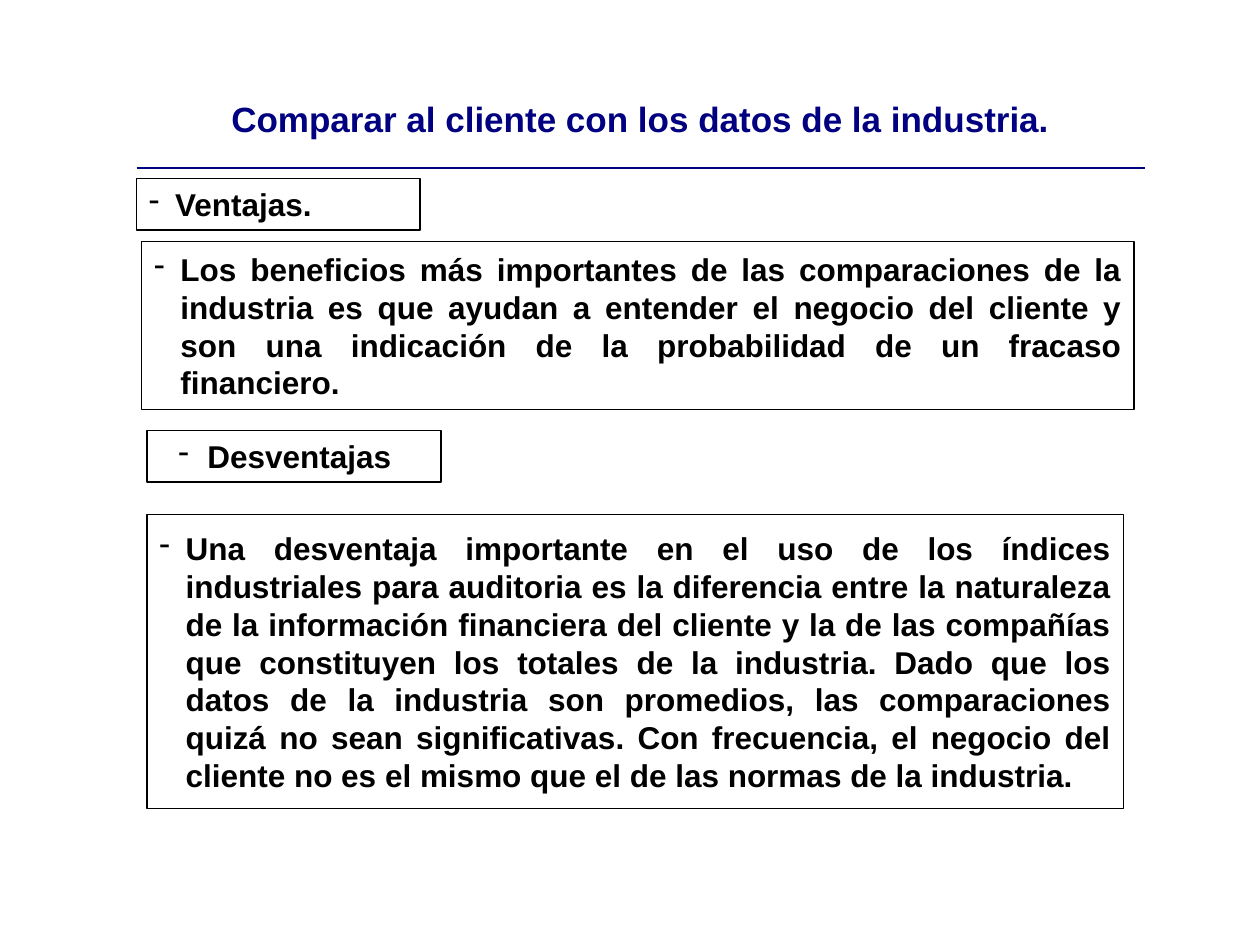
from dataclasses import dataclass

from lxml.etree import SubElement
from pptx import Presentation
from pptx.dml.color import RGBColor
from pptx.enum.shapes import MSO_SHAPE as Shape
from pptx.enum.text import MSO_ANCHOR as Anchor, PP_ALIGN as Align
from pptx.oxml.ns import qn
from pptx.util import Pt


@dataclass(frozen=True)
class Theme:
    font: str = "Arial"
    title_size: float = 20
    body_size: float = 18
    ink: RGBColor = RGBColor(0x00, 0x00, 0x00)
    navy: RGBColor = RGBColor(0x00, 0x00, 0x80)
    outline: float = 0.75
    rule: float = 1


THEME = Theme()
HANGING = (15, -15)
CENTERED = (6, -16.5)

TITLE = "Comparar al cliente con los datos de la industria."
ADVANTAGE = (
    "Los beneficios más importantes de las comparaciones de la industria es que "
    "ayudan a entender el negocio del cliente y son una indicación de la "
    "probabilidad de un fracaso financiero."
)
DISADVANTAGE = (
    "Una desventaja importante en el uso de los índices industriales para auditoria "
    "es la diferencia entre la naturaleza de la información financiera del cliente y "
    "la de las compañías que constituyen los totales de la industria. Dado que los "
    "datos de la industria son promedios, las comparaciones quizá no sean "
    "significativas. Con frecuencia, el negocio del cliente no es el mismo que el de "
    "las normas de la industria."
)

# Box (left, top, width, height), text, alignment, (margin, indent)
BOXES = [
    ((78, 102, 162, 29.5), "Ventajas.", Align.LEFT, HANGING),
    ((81, 138, 567, 96), ADVANTAGE, Align.JUSTIFY, HANGING),
    ((84, 294, 558, 168), DISADVANTAGE, Align.JUSTIFY, HANGING),
    ((84, 246, 168, 29.5), "Desventajas", Align.CENTER, CENTERED),
]


def write_text(text_frame, text, size, color, alignment):
    text_frame.text = text
    paragraph = text_frame.paragraphs[0]
    paragraph.alignment = alignment
    font = paragraph.runs[0].font
    font.name, font.size, font.bold = THEME.font, Pt(size), True
    font.color.rgb = color
    return paragraph


def add_dash_bullet(paragraph, margin, indent):
    properties = paragraph._p.get_or_add_pPr()
    properties.set("marL", str(Pt(margin)))
    properties.set("indent", str(Pt(indent)))
    SubElement(properties, qn("a:buFontTx"))
    SubElement(properties, qn("a:buChar"), char="-")


def add_title_table(slide, box):
    """Place the title in a one-cell table ruled along its bottom edge."""
    table = slide.shapes.add_table(1, 1, *map(Pt, box)).table
    table.first_row = table.horz_banding = False
    cell = table.cell(0, 0)
    write_text(cell.text_frame, TITLE, THEME.title_size, THEME.navy, Align.CENTER)
    properties = cell._tc.get_or_add_tcPr()
    for side in ("lnL", "lnR", "lnT"):
        SubElement(SubElement(properties, qn(f"a:{side}")), qn("a:noFill"))
    rule = SubElement(properties, qn("a:lnB"), w=str(Pt(THEME.rule)))
    fill = SubElement(rule, qn("a:solidFill"))
    SubElement(fill, qn("a:srgbClr"), val=str(THEME.navy))
    cell.fill.background()


def add_bullet_box(slide, box, text, alignment, indents):
    shape = slide.shapes.add_shape(Shape.RECTANGLE, *map(Pt, box))
    shape.shadow.inherit = False
    shape.fill.background()
    shape.line.color.rgb = THEME.ink
    shape.line.width = Pt(THEME.outline)
    text_frame = shape.text_frame
    text_frame.word_wrap = True
    text_frame.vertical_anchor = Anchor.MIDDLE
    paragraph = write_text(text_frame, text, THEME.body_size, THEME.ink, alignment)
    add_dash_bullet(paragraph, *indents)


def main():
    presentation = Presentation()
    presentation.slide_width, presentation.slide_height = Pt(720), Pt(540)
    slide = presentation.slides.add_slide(presentation.slide_layouts[6])
    add_title_table(slide, (78, 54, 576, 42))
    for box, text, alignment, indents in BOXES:
        add_bullet_box(slide, box, text, alignment, indents)
    presentation.save("out.pptx")


if __name__ == "__main__":
    main()
